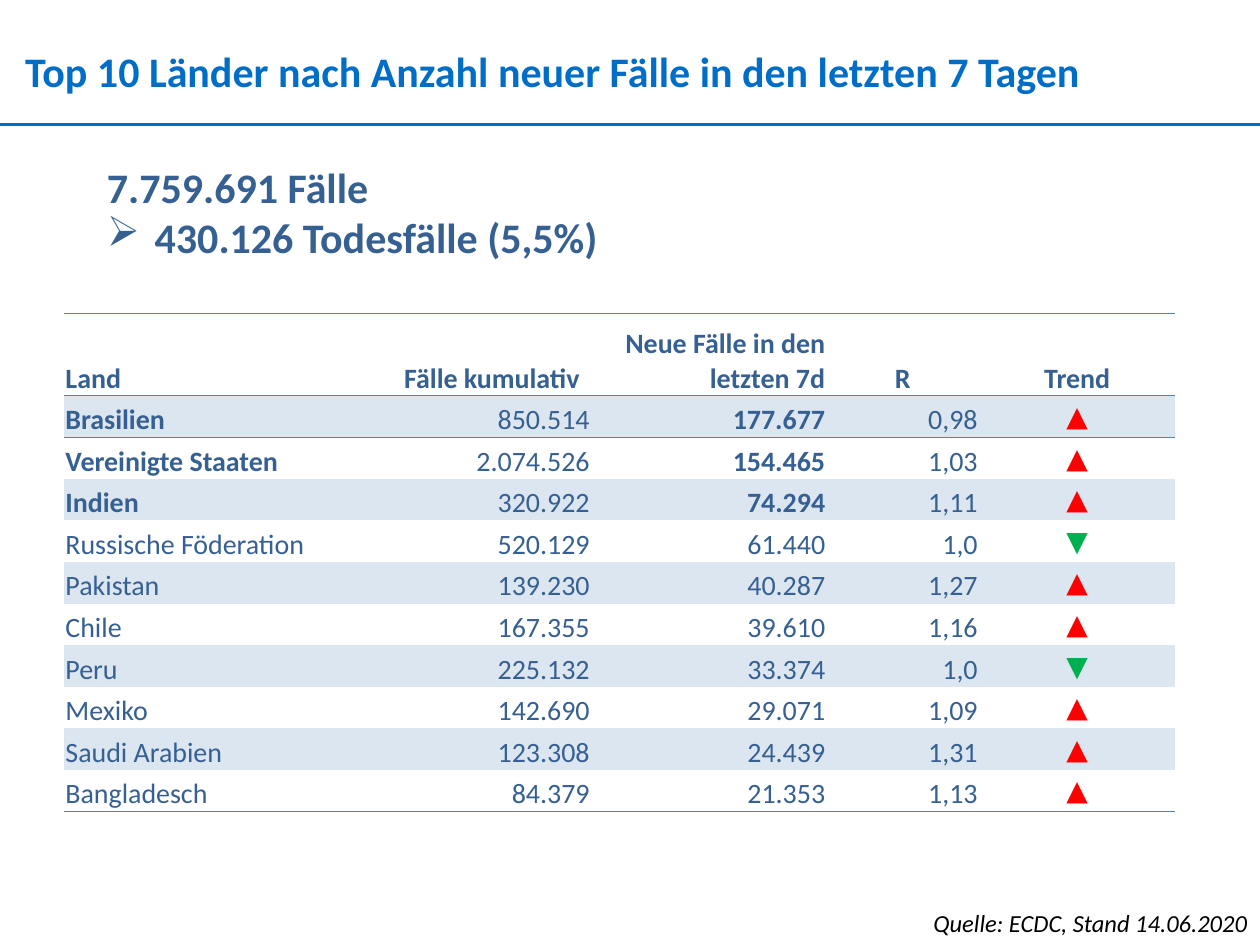
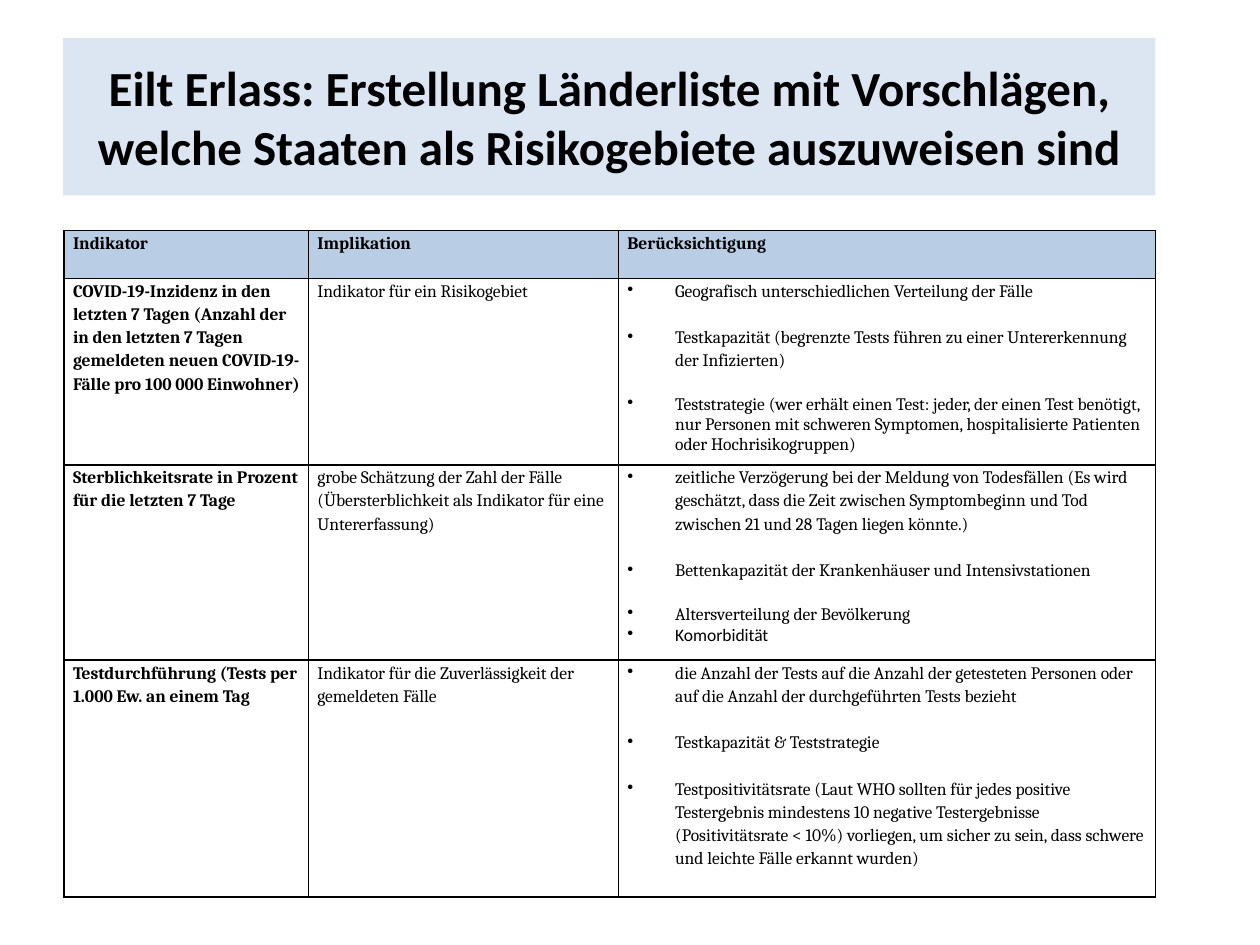
from lxml import etree
from pptx import Presentation
from pptx.dml.color import RGBColor
from pptx.enum.shapes import MSO_CONNECTOR
from pptx.enum.text import MSO_ANCHOR, MSO_AUTO_SIZE, PP_ALIGN
from pptx.oxml.ns import qn
from pptx.util import Inches, Pt

LEFT, CENTER, RIGHT = PP_ALIGN.LEFT, PP_ALIGN.CENTER, PP_ALIGN.RIGHT
TOP, MIDDLE, BOTTOM = MSO_ANCHOR.TOP, MSO_ANCHOR.MIDDLE, MSO_ANCHOR.BOTTOM
NO_RESIZE = MSO_AUTO_SIZE.NONE
STRAIGHT = MSO_CONNECTOR.STRAIGHT
TITLE_ONLY = 5
PLAIN_TABLE = "{2D5ABB26-0587-4C30-8999-92F81FD0307C}"

BLACK, BLUE, NAVY, RULE = "000000", "006EC7", "366092", "4F81BD"
BAND, TITLE_BAND, HEADER = "DCE6F1", "DCE6F2", "B9CDE5"
RED, GREEN = "FF0000", "00B050"
SANS, SERIF = "Calibri", "Cambria"
SINGLE, WIDE, GAP = 1.0, 1.15, 13.3

COUNTRIES = [
    ("Brasilien", "850.514", "177.677", "0,98", "▲"),
    ("Vereinigte Staaten", "2.074.526", "154.465", "1,03", "▲"),
    ("Indien", "320.922", "74.294", "1,11", "▲"),
    ("Russische Föderation", "520.129", "61.440", "1,0", "▼"),
    ("Pakistan", "139.230", "40.287", "1,27", "▲"),
    ("Chile", "167.355", "39.610", "1,16", "▲"),
    ("Peru", "225.132", "33.374", "1,0", "▼"),
    ("Mexiko", "142.690", "29.071", "1,09", "▲"),
    ("Saudi Arabien", "123.308", "24.439", "1,31", "▲"),
    ("Bangladesch", "84.379", "21.353", "1,13", "▲"),
]
COUNTRY_HEADINGS = ["Land", "Fälle kumulativ", "Neue Fälle in den letzten 7d", "R", "Trend"]
TOP_COUNT = 3

INDICATOR_HEADINGS = ["Indikator", "Implikation", "Berücksichtigung"]
INDICATORS = [
    ("COVID-19-Inzidenz in den letzten 7 Tagen (Anzahl der in den letzten 7 Tagen "
     "gemeldeten neuen COVID-19-Fälle pro 100 000 Einwohner)",
     ["Indikator für ein Risikogebiet"],
     [("Geografisch unterschiedlichen Verteilung der Fälle", WIDE, 0, SERIF),
      ("Testkapazität (begrenzte Tests führen zu einer Untererkennung der Infizierten)",
       WIDE, GAP, SERIF),
      ("Teststrategie (wer erhält einen Test: jeder, der einen Test benötigt, nur Personen "
       "mit schweren Symptomen, hospitalisierte Patienten oder Hochrisikogruppen)",
       SINGLE, GAP, SERIF)]),
    ("Sterblichkeitsrate in Prozent für die letzten 7 Tage",
     ["grobe Schätzung der Zahl der Fälle",
      "(Übersterblichkeit als Indikator für eine Untererfassung)"],
     [("zeitliche Verzögerung bei der Meldung von Todesfällen (Es wird geschätzt, dass die "
       "Zeit zwischen Symptombeginn und Tod zwischen 21 und 28 Tagen liegen könnte.)",
       WIDE, 0, SERIF),
      ("Bettenkapazität der Krankenhäuser und Intensivstationen", WIDE, GAP, SERIF),
      ("Altersverteilung der Bevölkerung", SINGLE, GAP, SERIF),
      ("Komorbidität", SINGLE, 0, SANS)]),
    ("Testdurchführung (Tests per 1.000 Ew. an einem Tag",
     ["Indikator für die Zuverlässigkeit der gemeldeten Fälle"],
     [("die Anzahl der Tests auf die Anzahl der getesteten Personen oder auf die Anzahl der "
       "durchgeführten Tests bezieht", WIDE, 0, SERIF),
      ("Testkapazität & Teststrategie", WIDE, GAP, SERIF),
      ("Testpositivitätsrate (Laut WHO sollten für jedes positive Testergebnis mindestens 10 "
       "negative Testergebnisse (Positivitätsrate < 10%) vorliegen, um sicher zu sein, dass "
       "schwere und leichte Fälle erkannt wurden)", WIDE, GAP, SERIF)]),
]


def color(value):
    return RGBColor.from_string(value)


def write(frame, text, size, ink, font=SANS, bold=False, italic=False, align=LEFT,
          spacing=SINGLE, before=0, bullet=None):
    para = frame.paragraphs[0]
    if para.runs:
        para = frame.add_paragraph()
    para.alignment = align
    para.line_spacing = spacing
    para.space_before = Pt(before)
    if bullet:
        properties = para._p.get_or_add_pPr()
        properties.set("marL", str(Inches(0.38)))
        properties.set("indent", str(Inches(-0.38)))
        etree.SubElement(properties, qn("a:buChar")).set("char", bullet)
    span = para.add_run()
    span.text = text
    span.font.name = font
    span.font.size = Pt(size)
    span.font.bold = bold
    span.font.italic = italic
    span.font.color.rgb = color(ink)


def set_margins(target, left, top, right, bottom):
    target.margin_left, target.margin_top = Inches(left), Inches(top)
    target.margin_right, target.margin_bottom = Inches(right), Inches(bottom)


def place_title(page, box, text, size, ink, align, anchor):
    title = page.shapes.title
    title.left, title.top, title.width, title.height = map(Inches, box)
    frame = title.text_frame
    frame.auto_size = NO_RESIZE
    frame.word_wrap = True
    frame.vertical_anchor = anchor
    write(frame, text, size, ink, bold=True, align=align)
    return title


def add_text_box(page, box, wrap=True):
    frame = page.shapes.add_textbox(*map(Inches, box)).text_frame
    frame.word_wrap = wrap
    return frame


def add_plain_table(page, left, top, widths, heights):
    frame = page.shapes.add_table(len(heights), len(widths), Inches(left), Inches(top),
                                  Inches(sum(widths)), Inches(sum(heights)))
    table = frame.table
    table.first_row = table.horz_banding = False
    table._tbl.tblPr.find(qn("a:tableStyleId")).text = PLAIN_TABLE
    for column, width in zip(table.columns, widths):
        column.width = Inches(width)
    for row, height in zip(table.rows, heights):
        row.height = Inches(height)
    return table


def style_cell(cell, fill, sides, ink, weight, margins, anchor=TOP):
    set_margins(cell, *margins)
    cell.vertical_anchor = anchor
    if fill:
        cell.fill.solid()
        cell.fill.fore_color.rgb = color(fill)
    else:
        cell.fill.background()
    properties = cell._tc.get_or_add_tcPr()
    for index, side in enumerate(sides):
        line = etree.Element(qn(f"a:ln{side}"), w=str(Pt(weight)))
        solid = etree.SubElement(line, qn("a:solidFill"))
        etree.SubElement(solid, qn("a:srgbClr")).set("val", ink)
        properties.insert(index, line)


def add_country_table(page, left, top):
    heights = [0.65] + [0.33] * len(COUNTRIES)
    table = add_plain_table(page, left, top, [2.61, 1.57, 1.87, 1.21, 1.56], heights)
    heading_aligns = [LEFT, CENTER, RIGHT, CENTER, CENTER]
    body_aligns = [LEFT, RIGHT, RIGHT, RIGHT, CENTER]
    trend_inks = {"▲": RED, "▼": GREEN}
    for r, values in enumerate([COUNTRY_HEADINGS] + COUNTRIES):
        aligns = body_aligns if r else heading_aligns
        sides = {0: "TB", 1: "T", len(COUNTRIES): "B"}.get(r, "")
        for c, value in enumerate(values):
            cell = table.cell(r, c)
            anchor = MIDDLE if value in trend_inks else BOTTOM
            style_cell(cell, BAND if r % 2 else None, sides, RULE, 0.5,
                       (0.01, 0.01, 0.01, 0), anchor)
            bold = r == 0 or (r <= TOP_COUNT and c in (0, 2))
            write(cell.text_frame, value, 16, trend_inks.get(value, NAVY),
                  bold=bold, align=aligns[c])


def add_indicator_table(page, left, top):
    table = add_plain_table(page, left, top, [1.94, 2.46, 4.26], [0.38, 1.48, 1.55, 1.88])
    for row in table.rows:
        for cell in row.cells:
            fill = HEADER if row is table.rows[0] else None
            style_cell(cell, fill, "LRTB", BLACK, 1, (0.07, 0, 0.07, 0))
    for c, heading in enumerate(INDICATOR_HEADINGS):
        cell = table.cell(0, c)
        cell.fill.solid()
        cell.fill.fore_color.rgb = color(HEADER)
        write(cell.text_frame, heading, 10, BLACK, SERIF, bold=True, spacing=WIDE)
    for r, (indicator, implications, considerations) in enumerate(INDICATORS, 1):
        frames = [table.cell(r, c).text_frame for c in range(3)]
        write(frames[0], indicator, 10, BLACK, SERIF, bold=True, spacing=WIDE)
        for text in implications:
            write(frames[1], text, 10, BLACK, SERIF, spacing=WIDE)
        for text, spacing, before, font in considerations:
            write(frames[2], text, 10, BLACK, font, spacing=spacing, before=before, bullet="•")


def add_title_rule(page, top, width):
    rule = page.shapes.add_connector(STRAIGHT, 0, Inches(top), Inches(width), Inches(top))
    rule.line.color.rgb = color(BLUE)
    rule.line.width = Pt(1.5)
    etree.SubElement(rule._element.spPr, qn("a:effectLst"))


def build_country_slide(page):
    title = place_title(page, (0.2, 0.36, 9.63, 0.4),
                        "Top 10 Länder nach Anzahl neuer Fälle in den letzten 7 Tagen",
                        24, BLUE, LEFT, TOP)
    set_margins(title.text_frame, 0, 0, 0, 0)
    add_title_rule(page, 0.99, 10)
    totals = add_text_box(page, (0.75, 1.23, 4.2, 0.91), wrap=False)
    write(totals, "7.759.691 Fälle", 24, NAVY, bold=True)
    write(totals, "430.126 Todesfälle (5,5%)", 24, NAVY, bold=True, bullet="➢")
    add_country_table(page, 0.51, 2.49)
    source = add_text_box(page, (6.46, 7.16, 3.54, 0.34))
    write(source, "Quelle: ECDC, Stand 14.06.2020", 14, BLACK, italic=True, align=RIGHT)


def build_indicator_slide(page):
    title = place_title(page, (0.5, 0.3, 8.67, 1.25),
                        "Eilt Erlass: Erstellung Länderliste mit Vorschlägen, "
                        "welche Staaten als Risikogebiete auszuweisen sind",
                        28, BLACK, CENTER, MIDDLE)
    title.fill.solid()
    title.fill.fore_color.rgb = color(TITLE_BAND)
    add_indicator_table(page, 0.51, 1.83)


def main():
    deck = Presentation()
    deck.slide_width, deck.slide_height = Inches(10), Inches(7.5)
    for build in (build_country_slide, build_indicator_slide):
        build(deck.slides.add_slide(deck.slide_layouts[TITLE_ONLY]))
    deck.save("out.pptx")


if __name__ == "__main__":
    main()
